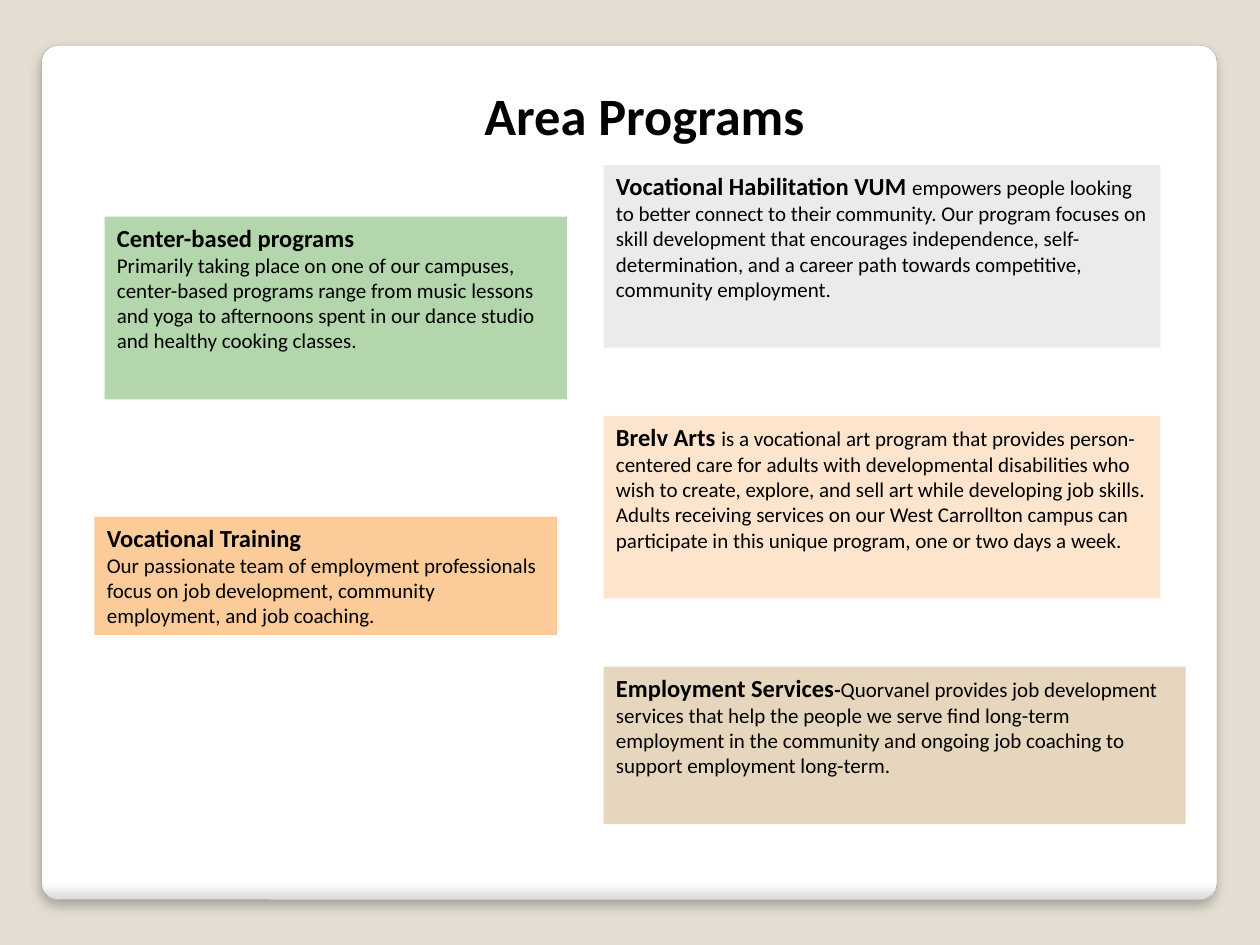
from lxml.etree import SubElement
from pptx import Presentation
from pptx.dml.color import RGBColor
from pptx.enum.shapes import MSO_SHAPE
from pptx.enum.text import MSO_ANCHOR, PP_ALIGN
from pptx.oxml.ns import qn
from pptx.util import Inches, Pt


def rgb(value):
    """Turn a hex string into a colour."""
    return RGBColor.from_string(value)


class Deck:
    """Hold the style and the current slide."""

    font, ink = "Calibri", "000000"
    background, edge = "E3DED1", "A4A4A4"
    head_size, body_size, title_size = 14, 12, 30

    def __init__(self):
        """Start a deck with one titled slide."""
        self.prs = Presentation()
        self.prs.slide_width, self.prs.slide_height = Inches(10), Inches(7.5)
        self.slide = self.prs.slides.add_slide(self.prs.slide_layouts[5])
        fill = self.slide.background.fill
        fill.solid()
        fill.fore_color.rgb = rgb(self.background)

    def style(self, r, size, bold):
        """Format one run."""
        r.font.name, r.font.size, r.font.bold = self.font, Pt(size), bold
        r.font.color.rgb = rgb(self.ink)

    def panel(self, x, y, w, h):
        """Draw the white rounded panel behind the content."""
        sp = self.slide.shapes.add_shape(
            MSO_SHAPE.ROUNDED_RECTANGLE, Inches(x), Inches(y), Inches(w), Inches(h))
        sp.adjustments[0] = 0.02
        sp.fill.gradient()
        sp.fill.gradient_angle = 270
        stops = zip(sp.fill.gradient_stops, (0.98, 1), ("FFFFFF", "DADADA"))
        for stop, position, color in stops:
            stop.position, stop.color.rgb = position, rgb(color)
        sp.line.color.rgb, sp.line.width = rgb(self.edge), Pt(0.16)
        sp.shadow.inherit = False
        effects = sp._element.spPr.find(qn("a:effectLst"))
        shadow = SubElement(effects, qn("a:outerShdw"), blurRad=str(Pt(6)),
                            dist=str(Pt(4)), dir="5400000", rotWithShape="0")
        color = SubElement(shadow, qn("a:srgbClr"), val="000000")
        SubElement(color, qn("a:alpha"), val="25000")
        tree = self.slide.shapes._spTree
        tree.remove(sp._element)
        tree.insert(2, sp._element)

    def title(self, text, x, y, w, h):
        """Fill and place the title placeholder."""
        sp = self.slide.shapes.title
        sp.left, sp.top, sp.width, sp.height = map(Inches, (x, y, w, h))
        tf = sp.text_frame
        tf.text, tf.vertical_anchor = text, MSO_ANCHOR.TOP
        p = tf.paragraphs[0]
        p.alignment = PP_ALIGN.CENTER
        self.style(p.runs[0], self.title_size, True)

    def card(self, x, y, w, h, color, head, body, dash="", stacked=False):
        """Draw a program card with its heading beside or above the body."""
        sp = self.slide.shapes.add_shape(
            MSO_SHAPE.RECTANGLE, Inches(x), Inches(y), Inches(w), Inches(h))
        sp.shadow.inherit = False
        sp.fill.solid()
        sp.fill.fore_color.rgb = rgb(color)
        sp.line.fill.background()
        tf = sp.text_frame
        tf.word_wrap, tf.vertical_anchor = True, MSO_ANCHOR.TOP
        p = tf.paragraphs[0]
        runs = ((head, self.head_size, True), (dash, self.body_size, True),
                (body, self.body_size, False))
        for text, size, bold in runs:
            if not text:
                continue
            if stacked and text == body:
                p = tf.add_paragraph()
            p.alignment = PP_ALIGN.LEFT
            r = p.add_run()
            r.text = text
            self.style(r, size, bold)


def main():
    """Build the area programs slide."""
    deck = Deck()
    deck.panel(0.33, 0.36, 9.33, 6.78)
    deck.title("Area Programs", 2.68, 0.61, 4.87, 0.61)

    services = [
        (4.42, 1.45, "EBEBEB", "Vocational Habilitation VUM ",
         "empowers people looking to better connect to their community. Our program "
         "focuses on skill development that encourages independence, "
         "self-determination, and a career path towards competitive, community "
         "employment.", ""),
        (4.42, 1.45, "FDE5CD", "Brelv Arts ",
         "is a vocational art program that provides person-centered care for adults "
         "with developmental disabilities who wish to create, explore, and sell art "
         "while developing job skills. Adults receiving services on our West "
         "Carrollton campus can participate in this unique program, one or two days "
         "a week.", ""),
        (4.62, 1.25, "E6D6BD", "Employment Services",
         "Quorvanel provides job development services that help the people we serve "
         "find long-term employment in the community and ongoing job coaching to "
         "support employment long-term.", "-"),
    ]
    for i, (w, h, color, head, body, dash) in enumerate(services):
        deck.card(4.79, 1.31 + 1.99 * i, w, h, color, head, body, dash)

    deck.card(0.83, 1.72, 3.67, 1.45, "B3D6AC", "Center-based programs",
              "Primarily taking place on one of our campuses, center-based programs "
              "range from music lessons and yoga to afternoons spent in our dance "
              "studio and healthy cooking classes.", stacked=True)
    deck.card(0.75, 4.1, 3.67, 0.94, "FBCC9A", "Vocational Training",
              "Our passionate team of employment professionals focus on job "
              "development, community employment, and job coaching.", stacked=True)
    deck.prs.save("out.pptx")


if __name__ == "__main__":
    main()
